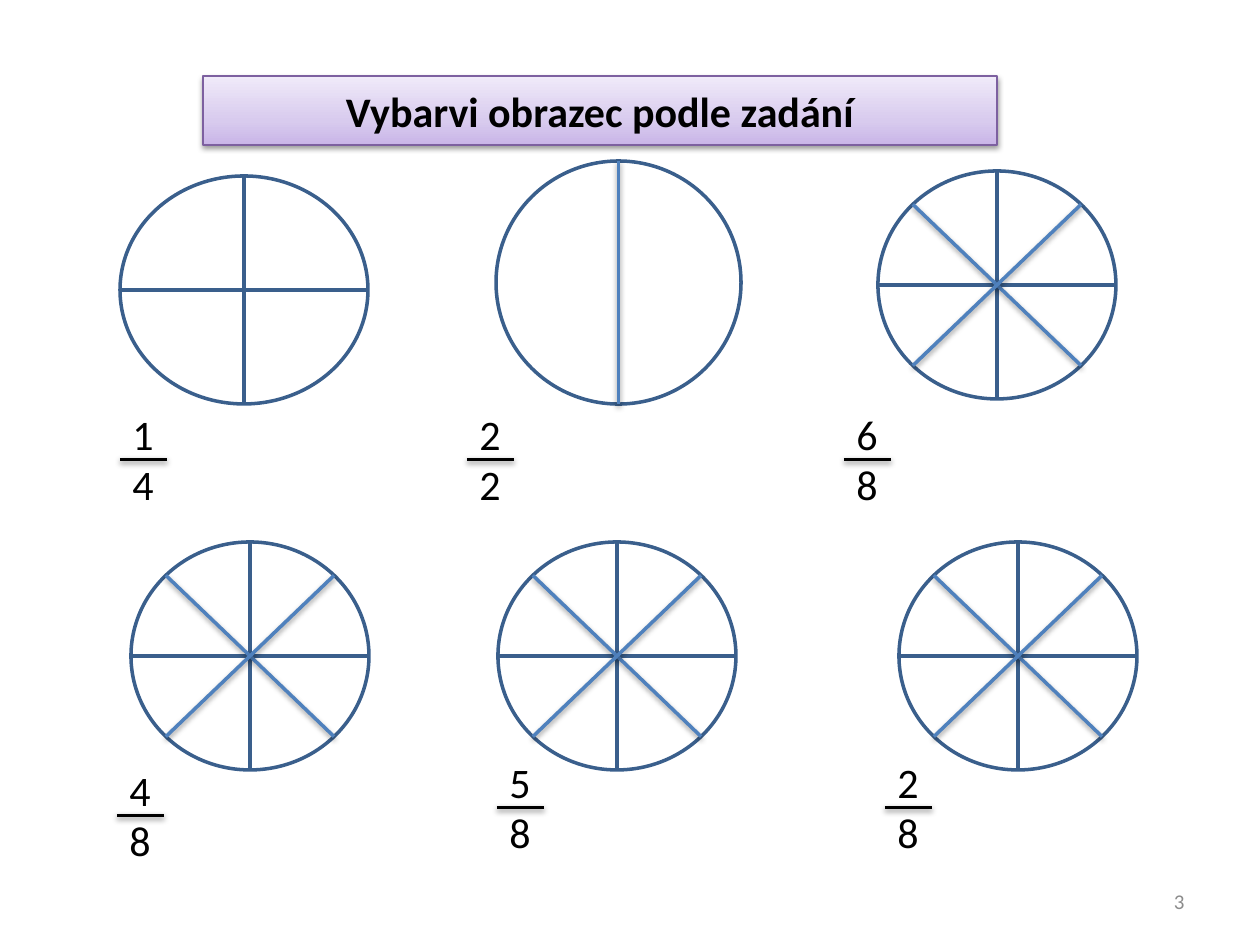
from math import cos, pi

from lxml import etree
from pptx import Presentation
from pptx import util as u
from pptx.dml.color import RGBColor
from pptx.enum import shapes, text
from pptx.oxml import parse_xml
from pptx.oxml.ns import nsdecls, qn

PX = u.Inches(1) / 126
FONT = "Calibri"
OUTLINE, DIAGONAL, BLACK = "3A5F8C", "4F81BD", "000000"
TITLE_BOX = (203, 76, 794, 69)
TITLE_STOPS = ((0, "C9B5E8"), (35, "D8CBEE"), (100, "F0EAF9"))
NUMBER_BOX = (903, 876, 294, 50)
FRACTION_SIZE = (47, 115)

# circle box, slices, fraction position, numerator, denominator
EXERCISES = [
    ((120, 176, 248, 228), 4, (120, 402), 1, 4),
    ((496, 161, 245, 243), 2, (467, 402), 2, 2),
    ((878, 171, 238, 228), 8, (844, 402), 6, 8),
    ((131, 542, 238, 228), 8, (117, 758), 4, 8),
    ((498, 542, 238, 228), 8, (497, 750), 5, 8),
    ((899, 542, 238, 228), 8, (885, 750), 2, 8),
]


def emu(*lengths):
    return [u.Emu(round(length * PX)) for length in lengths]


def color(value):
    return RGBColor.from_string(value)


def set_line(line, value, points=2):
    line.color.rgb = color(value)
    line.width = u.Pt(points)


def add_shadow(shape):
    shape._element.spPr.append(parse_xml(
        f'<a:effectLst {nsdecls("a")}><a:outerShdw blurRad="40000" dist="20000" '
        f'dir="5400000" rotWithShape="0"><a:srgbClr val="{BLACK}">'
        '<a:alpha val="38000"/></a:srgbClr></a:outerShdw></a:effectLst>'))


def format_text(para, size, value, align, bold=False):
    para.alignment = align
    for span in para.runs:
        span.font.name = FONT
        span.font.size = u.Pt(size)
        span.font.bold = bold
        span.font.color.rgb = color(value)


def add_shadowed_line(parts, ends, value):
    line = parts.add_connector(shapes.MSO_CONNECTOR.STRAIGHT, *emu(*ends))
    set_line(line.line, value)
    add_shadow(line)


def add_circle(page, box, slices):
    """Draw a circle cut into 2, 4 or 8 slices."""
    parts = page.shapes if slices == 4 else page.shapes.add_group_shape().shapes
    kind = shapes.MSO_SHAPE.OVAL if slices == 2 else shapes.MSO_SHAPE.FLOWCHART_OR
    circle = parts.add_shape(kind, *emu(*box))
    circle.shadow.inherit = False
    circle.fill.background()
    set_line(circle.line, OUTLINE)

    left, top, width, height = box
    x, y = left + width / 2, top + height / 2
    if slices == 2:
        add_shadowed_line(parts, (x, top, x, top + height), DIAGONAL)
    if slices == 8:
        dx, dy = width / 2 * cos(pi / 4), height / 2 * cos(pi / 4)
        for side in (-1, 1):
            ends = (x + side * dx, y - dy, x - side * dx, y + dy)
            add_shadowed_line(parts, ends, DIAGONAL)


def add_fraction(page, left, top, numerator, denominator):
    parts = page.shapes.add_group_shape().shapes
    width, height = FRACTION_SIZE
    frame = parts.add_textbox(*emu(left, top, width, height)).text_frame
    frame.word_wrap = False
    frame.auto_size = text.MSO_AUTO_SIZE.SHAPE_TO_FIT_TEXT
    para = frame.paragraphs[0]
    para.text = f"{numerator}\n{denominator}"
    format_text(para, 24, BLACK, text.PP_ALIGN.LEFT)
    middle = top + height / 2
    add_shadowed_line(parts, (left, middle, left + width, middle), BLACK)


def format_title(title, box):
    title.left, title.top, title.width, title.height = emu(*box)
    properties = title._element.spPr
    geometry = etree.SubElement(properties, qn("a:prstGeom"), prst="roundRect")
    etree.SubElement(geometry, qn("a:avLst"))
    stops = "".join(f'<a:gs pos="{place * 1000}"><a:srgbClr val="{value}"/></a:gs>'
                    for place, value in TITLE_STOPS)
    properties.append(parse_xml(
        f'<a:gradFill {nsdecls("a")} rotWithShape="1"><a:gsLst>{stops}</a:gsLst>'
        '<a:lin ang="16200000" scaled="0"/></a:gradFill>'))
    set_line(title.line, "7D60A0", 0.75)
    add_shadow(title)

    frame = title.text_frame
    frame.text = "Vybarvi obrazec podle zadání"
    frame.auto_size = text.MSO_AUTO_SIZE.NONE
    frame.vertical_anchor = text.MSO_ANCHOR.MIDDLE
    format_text(frame.paragraphs[0], 24, BLACK, text.PP_ALIGN.CENTER, bold=True)


def add_page_number(page, box, number):
    frame = page.shapes.add_textbox(*emu(*box)).text_frame
    frame.word_wrap = True
    frame.vertical_anchor = text.MSO_ANCHOR.MIDDLE
    frame.text = str(number)
    format_text(frame.paragraphs[0], 12, "8C8C8C", text.PP_ALIGN.RIGHT)


def main():
    deck = Presentation()
    deck.slide_width, deck.slide_height = u.Inches(10), u.Inches(7.5)
    page = deck.slides.add_slide(deck.slide_layouts.get_by_name("Title Only"))
    format_title(page.shapes.title, TITLE_BOX)
    for circle_box, slices, corner, numerator, denominator in EXERCISES:
        add_circle(page, circle_box, slices)
        add_fraction(page, *corner, numerator, denominator)
    add_page_number(page, NUMBER_BOX, 3)
    deck.save("out.pptx")


if __name__ == "__main__":
    main()
